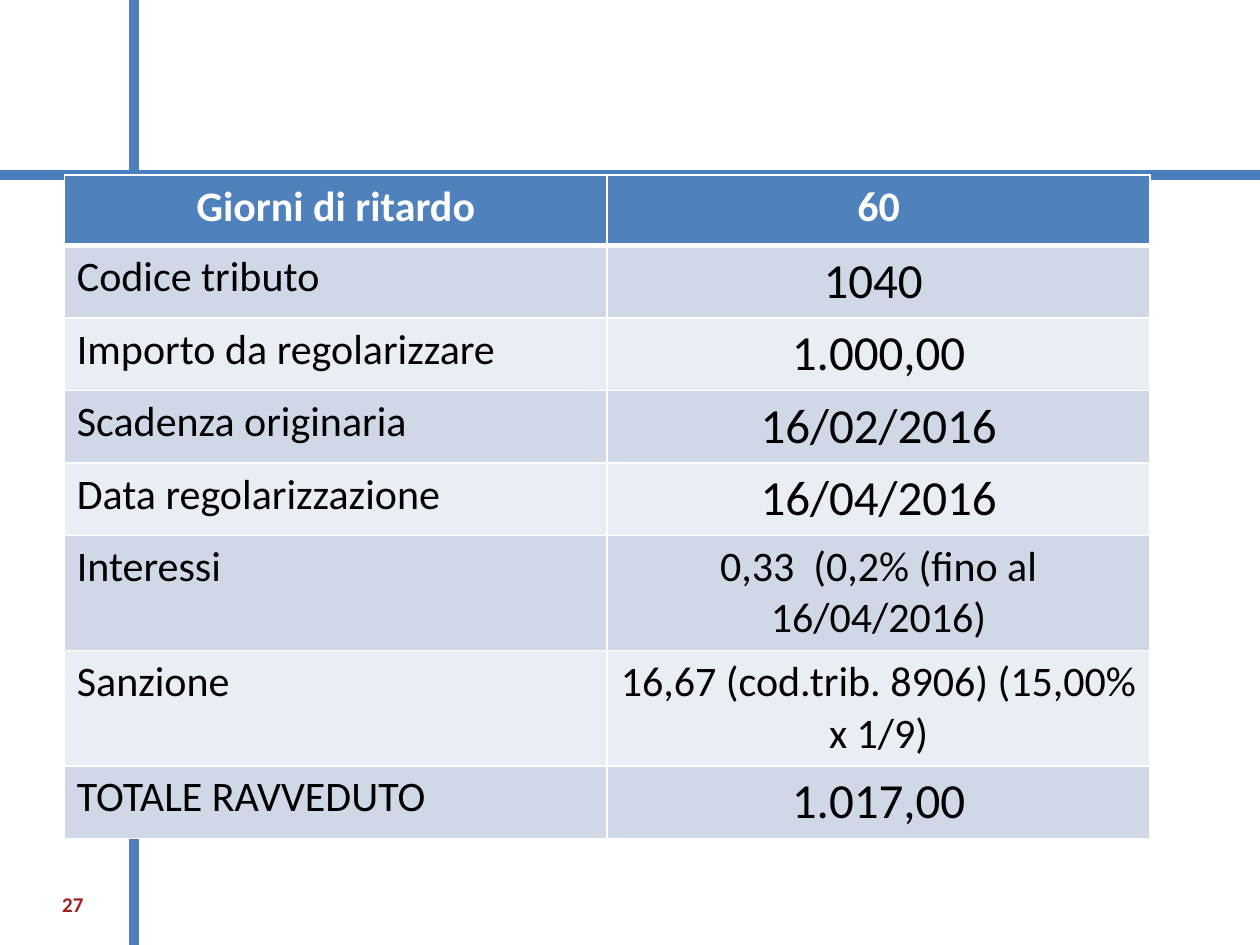
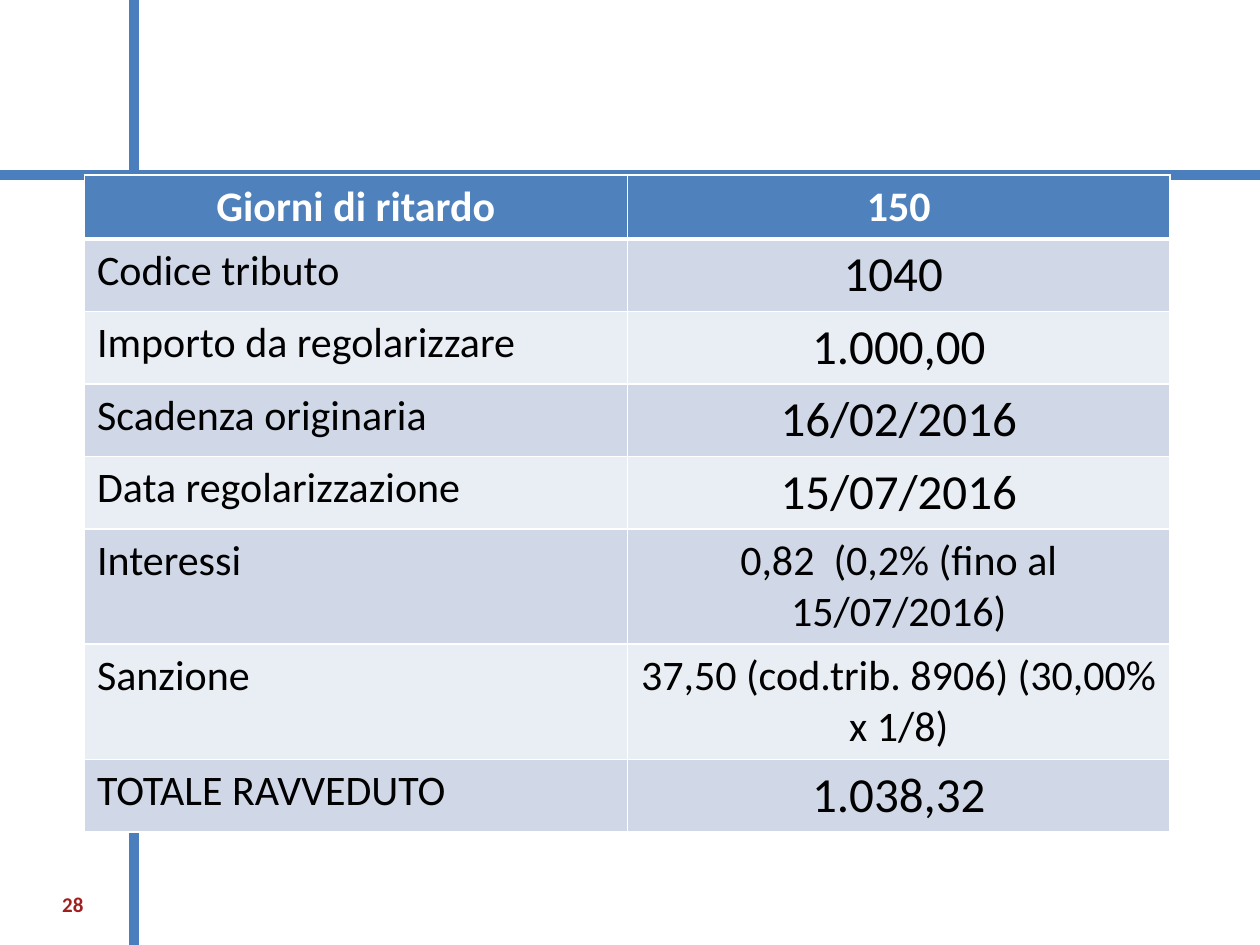
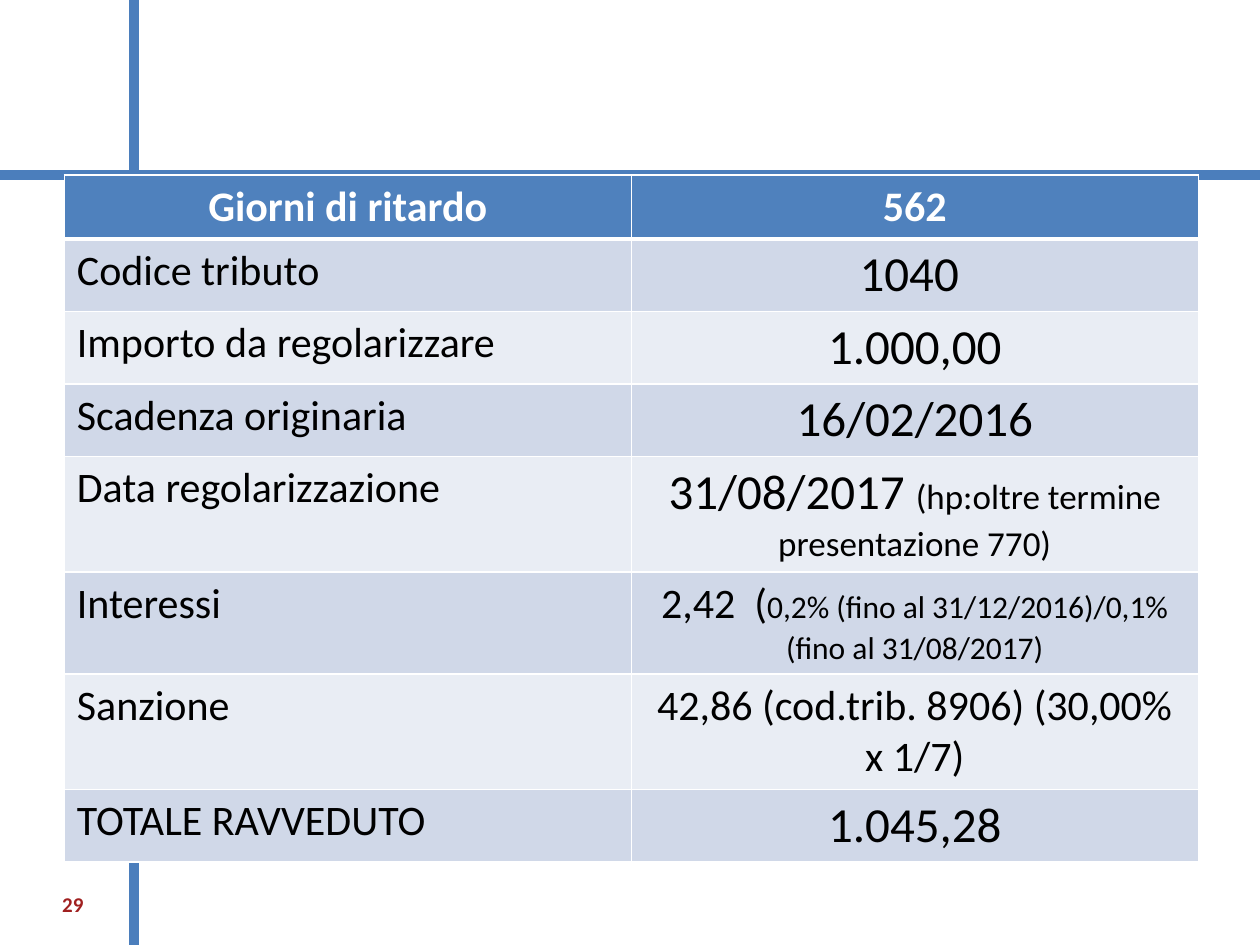
"""Build three slides that each show a late-payment calculation as a table."""
from lxml.etree import SubElement
from pptx import Presentation
from pptx.dml.color import RGBColor
from pptx.enum.shapes import MSO_CONNECTOR as Connector
from pptx.enum.text import MSO_ANCHOR as Anchor, PP_ALIGN as Align
from pptx.oxml.ns import qn
from pptx.util import Pt

WIDTH, HEIGHT = 720, 540
FONT = "Calibri"
RULE, HEADER, RED, WHITE, BLACK = "4B7EBC", "4F81BD", "A02020", "FFFFFF", "000000"
BANDS = ("D0D8E8", "E9EDF4")
RULE_X, RULE_Y = 76.5, 100
ROW_HEIGHT = 29.5
BODY, LARGE = 24, 28

LABELS = (
    "Giorni di ritardo", "Codice tributo", "Importo da regolarizzare", "Scadenza originaria",
    "Data regolarizzazione", "Interessi", "Sanzione", "TOTALE RAVVEDUTO",
)
COMMON = [[("1040 ", LARGE)], [("1.000,00", LARGE)], [("16/02/2016", LARGE)]]
CASES = (
    {
        "number": 27, "left": 36.75, "width": 620.5, "height": 373.5, "header": 40.25,
        "days": "60",
        "results": [
            [("16/04/2016", LARGE)],
            [("0,33  (0,2% (fino al 16/04/2016)", BODY)],
            [("16,67 (cod.trib. 8906) (15,00% x 1/9)", BODY)],
            [("1.017,00", LARGE)],
        ],
    },
    {
        "number": 28, "left": 48.25, "width": 620.5, "height": 369.5, "header": ROW_HEIGHT,
        "days": "150",
        "results": [
            [("15/07/2016", LARGE)],
            [("0,82  (0,2% (fino al 15/07/2016)", BODY)],
            [("37,50 (cod.trib. 8906) (30,00% x 1/8)", BODY)],
            [("1.038,32", LARGE)],
        ],
    },
    {
        "number": 29, "left": 36.75, "width": 648, "height": 386.5, "header": ROW_HEIGHT,
        "days": "562",
        "results": [
            [("31/08/2017 ", LARGE), ("(hp:oltre termine presentazione 770)", 20)],
            [("2,42  (", BODY), ("0,2% (fino al 31/12/2016)/0,1% (fino al 31/08/2017)", 18)],
            [("42,86 (cod.trib. 8906) (30,00% x 1/7)", BODY)],
            [("1.045,28", LARGE)],
        ],
    },
)


def color(code):
    return RGBColor.from_string(code)


def write(para, text, size=BODY, ink=BLACK, bold=False, align=Align.LEFT):
    para.alignment = align
    span = para.add_run()
    span.text = text
    span.font.name, span.font.size, span.font.bold = FONT, Pt(size), bold
    span.font.color.rgb = color(ink)


def add_rule(page, x1, y1, x2, y2):
    rule = page.shapes.add_connector(Connector.STRAIGHT, Pt(x1), Pt(y1), Pt(x2), Pt(y2))
    rule.line.color.rgb = color(RULE)
    rule.line.width = Pt(6)
    SubElement(rule._element.spPr, qn("a:effectLst"))


def add_borders(cell, row):
    properties = cell._tc.get_or_add_tcPr()
    widths = {"L": 1, "R": 1, "T": 3 if row == 1 else 1, "B": 3 if row == 0 else 1}
    for side, width in widths.items():
        line = SubElement(properties, qn(f"a:ln{side}"), w=str(Pt(width)))
        SubElement(SubElement(line, qn("a:solidFill")), qn("a:srgbClr"), val=WHITE)


def add_case_table(page, case):
    values = [[(case["days"], BODY)], *COMMON, *case["results"]]
    frame = page.shapes.add_table(
        len(LABELS), 2, Pt(case["left"]), Pt(RULE_Y), Pt(case["width"]), Pt(case["height"]))
    table = frame.table
    for row, (label, value) in enumerate(zip(LABELS, values)):
        is_header = row == 0
        table.rows[row].height = Pt(case["header"] if is_header else ROW_HEIGHT)
        for column, spans in enumerate(([(label, BODY)], value)):
            cell = table.cell(row, column)
            add_borders(cell, row)
            cell.fill.solid()
            cell.fill.fore_color.rgb = color(HEADER if is_header else BANDS[(row - 1) % 2])
            for text, size in spans:
                write(cell.text_frame.paragraphs[0], text, size=size, bold=is_header,
                      ink=WHITE if is_header else BLACK,
                      align=Align.CENTER if is_header or column else Align.LEFT)
    frame.height = Pt(case["height"])


def add_page_number(page, number):
    box = page.shapes.add_textbox(Pt(25.25), Pt(502.5), Pt(29.5), Pt(28.75))
    box.text_frame.word_wrap = True
    box.text_frame.vertical_anchor = Anchor.MIDDLE
    write(box.text_frame.paragraphs[0], str(number), size=12, ink=RED, bold=True,
          align=Align.RIGHT)


def main():
    deck = Presentation()
    deck.slide_width, deck.slide_height = Pt(WIDTH), Pt(HEIGHT)
    for case in CASES:
        page = deck.slides.add_slide(deck.slide_layouts[6])
        add_rule(page, RULE_X, 0, RULE_X, HEIGHT)
        add_rule(page, 0, RULE_Y, WIDTH, RULE_Y)
        add_case_table(page, case)
        add_page_number(page, case["number"])
    deck.save("out.pptx")


if __name__ == "__main__":
    main()
